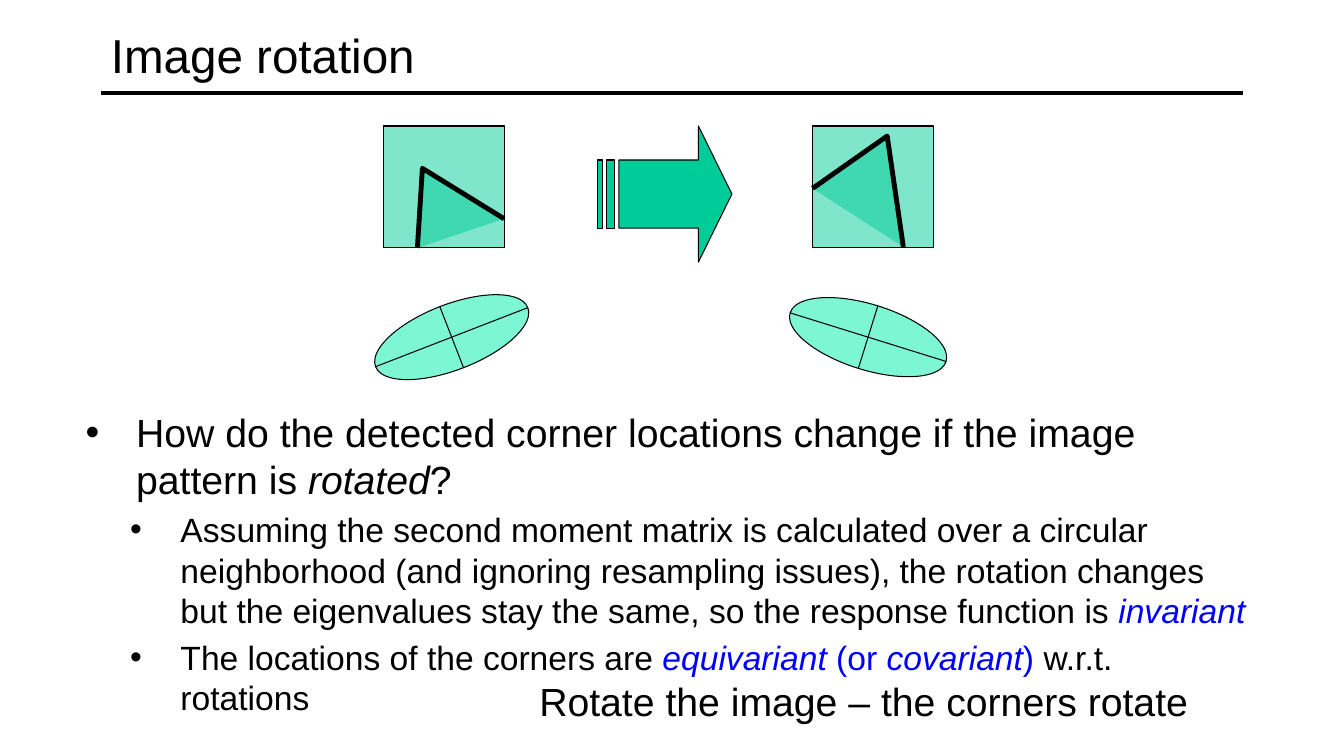
from math import cos, radians, sin

from lxml import etree
from pptx import Presentation
from pptx.dml.color import RGBColor
from pptx.enum.shapes import MSO_CONNECTOR, MSO_SHAPE
from pptx.enum.text import MSO_ANCHOR, MSO_AUTO_SIZE, PP_ALIGN
from pptx.oxml.ns import qn
from pptx.util import Inches, Pt

STRAIGHT = MSO_CONNECTOR.STRAIGHT
RECTANGLE = MSO_SHAPE.RECTANGLE
OVAL = MSO_SHAPE.OVAL
STRIPED_ARROW = MSO_SHAPE.STRIPED_RIGHT_ARROW
MIDDLE, TOP = MSO_ANCHOR.MIDDLE, MSO_ANCHOR.TOP
LEFT = PP_ALIGN.LEFT
NO_FIT = MSO_AUTO_SIZE.NONE

COLORS = {"ink": "000000", "green": "00CC99", "mint": "7CF6D3", "accent": "0000FF"}
FONT = "Arial"

# Paragraphs: level, size, spans of (text, color, italic)
BULLETS = [
    (0, 28, [
        ("How do the detected corner locations change if the image pattern is ", "ink", False),
        ("rotated", "ink", True),
        ("?", "ink", False),
    ]),
    (1, 24, [
        ("Assuming the second moment matrix is calculated over a circular neighborhood "
         "(and ignoring resampling issues), the rotation changes but the eigenvalues "
         "stay the same, so the response function is ", "ink", False),
        ("invariant", "accent", True),
    ]),
    (1, 24, [
        ("The locations of the corners are ", "ink", False),
        ("equivariant", "accent", True),
        (" (or ", "accent", False),
        ("covariant", "accent", True),
        (") ", "accent", False),
        ("w.r.t. rotations", "ink", False),
    ]),
]


def color(name):
    return RGBColor.from_string(COLORS[name])


def place(shape, box):
    shape.left, shape.top, shape.width, shape.height = map(Inches, box)


def style_span(span, size, name="ink", italic=False):
    span.font.name = FONT
    span.font.size = Pt(size)
    span.font.italic = italic
    span.font.color.rgb = color(name)


def style_shape(shape, fill, weight=0.75, opacity=100):
    shape.shadow.inherit = False
    shape.fill.solid()
    shape.fill.fore_color.rgb = color(fill)
    shape.line.color.rgb = color("ink")
    shape.line.width = Pt(weight)
    if opacity < 100:
        tint = shape.element.spPr.find(qn("a:solidFill")).find(qn("a:srgbClr"))
        etree.SubElement(tint, qn("a:alpha"), val=str(opacity * 1000))


def add_line(shapes, start, end, weight):
    line = shapes.add_connector(STRAIGHT, *map(Inches, (*start, *end)))
    line.line.color.rgb = color("ink")
    line.line.width = Pt(weight)
    etree.SubElement(line.element.spPr, qn("a:effectLst"))


def add_title(page, box):
    left, top, width, height = box
    title = page.shapes.title
    place(title, box)
    frame = title.text_frame
    frame.text = "Image rotation"
    frame.vertical_anchor = MIDDLE
    frame.auto_size = NO_FIT
    frame.paragraphs[0].alignment = LEFT
    style_span(frame.paragraphs[0].runs[0], 34)
    # Rule under the title
    rule = top + height - 0.08
    add_line(page.shapes, (left, rule), (left + width, rule), 3)


def add_patch(page, box, corner):
    """Image patch with a corner, its points relative to the patch."""
    left, top, width, height = box
    shapes = page.shapes.add_group_shape().shapes
    square = shapes.add_shape(RECTANGLE, *map(Inches, box))
    style_shape(square, "green", opacity=50)
    points = [(Inches(left + x), Inches(top + y)) for x, y in corner]
    builder = shapes.build_freeform(*points[0])
    builder.add_line_segments(points[1:], close=False)
    style_shape(builder.convert_to_shape(), "green", 3.5, 50)


def add_ellipse(page, box, angle):
    """Tilted ellipse with both of its axes."""
    left, top, width, height = box
    shapes = page.shapes.add_group_shape().shapes
    ellipse = shapes.add_shape(OVAL, *map(Inches, box))
    ellipse.rotation = angle
    style_shape(ellipse, "mint")
    center_x, center_y = left + width / 2, top + height / 2
    for length, turn in ((width, angle), (height, angle + 90)):
        dx = length / 2 * cos(radians(turn))
        dy = length / 2 * sin(radians(turn))
        add_line(shapes, (center_x - dx, center_y - dy), (center_x + dx, center_y + dy), 0.75)


def add_arrow(page, box):
    arrow = page.shapes.add_shape(STRIPED_ARROW, *map(Inches, box))
    arrow.adjustments[0] = 0.5
    arrow.adjustments[1] = 0.25
    style_shape(arrow, "green")


def add_bullets(page, box):
    body = page.placeholders[1]
    place(body, box)
    frame = body.text_frame
    frame.vertical_anchor = TOP
    frame.auto_size = NO_FIT
    for index, (level, size, spans) in enumerate(BULLETS):
        para = frame.paragraphs[0] if index == 0 else frame.add_paragraph()
        para.level = level
        para.alignment = LEFT
        para.space_before = Pt(size * 0.2)
        for text, name, italic in spans:
            span = para.add_run()
            span.text = text
            style_span(span, size, name, italic)
        # Hanging bullet
        properties = para._p.get_or_add_pPr()
        properties.set("marL", str(Inches(0.5 + 0.44 * level)))
        properties.set("indent", str(Inches(-0.5)))
        etree.SubElement(properties, qn("a:buFont"), typeface=FONT)
        etree.SubElement(properties, qn("a:buChar"), char="•")


def add_caption(page, box):
    caption = page.shapes.add_textbox(*map(Inches, box))
    frame = caption.text_frame
    frame.word_wrap = False
    frame.text = "Rotate the image – the corners rotate"
    style_span(frame.paragraphs[0].runs[0], 28)


def main():
    deck = Presentation()
    deck.slide_width, deck.slide_height = Inches(13.33), Inches(7.5)
    page = deck.slides.add_slide(deck.slide_layouts[1])

    add_title(page, (1, 0.08, 11.33, 0.92))

    # Patch before and after the rotation
    add_patch(page, (3.8, 1.25, 1.2, 1.21), [(0.34, 1.21), (0.39, 0.42), (1.2, 0.92)])
    add_patch(page, (8.06, 1.25, 1.2, 1.21), [(0, 0.62), (0.74, 0.1), (0.9, 1.2)])
    add_arrow(page, (5.93, 1.25, 1.33, 1.35))

    # Second moment ellipses
    add_ellipse(page, (3.67, 3.02, 1.62, 0.65), -21.2)
    add_ellipse(page, (7.8, 3.02, 1.62, 0.65), 17.3)

    add_bullets(page, (0.75, 4, 11.75, 2.83))
    add_caption(page, (5.25, 6.67, 6.72, 0.57))
    deck.save("out.pptx")


if __name__ == "__main__":
    main()
